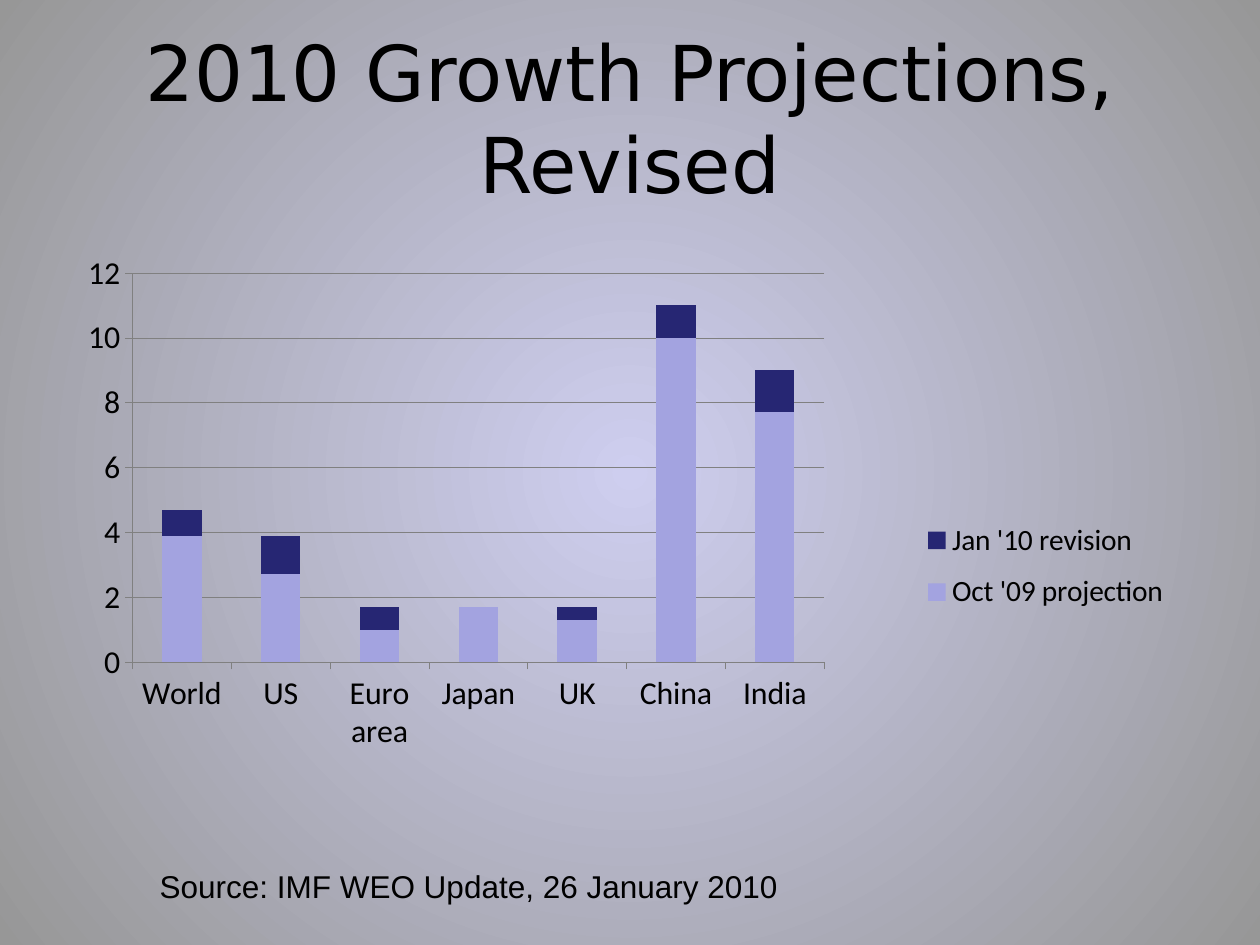
from lxml import etree
from pptx import Presentation
from pptx.chart.data import CategoryChartData
from pptx.dml.color import RGBColor
from pptx.enum.chart import XL_CHART_TYPE, XL_LEGEND_POSITION, XL_TICK_MARK
from pptx.enum.text import MSO_ANCHOR, MSO_AUTO_SIZE, PP_ALIGN
from pptx.oxml.ns import qn
from pptx.util import Cm, Pt

STACKED = XL_CHART_TYPE.COLUMN_STACKED
RIGHT = XL_LEGEND_POSITION.RIGHT
OUTSIDE = XL_TICK_MARK.OUTSIDE
MIDDLE = MSO_ANCHOR.MIDDLE
GROW = MSO_AUTO_SIZE.SHAPE_TO_FIT_TEXT
LEFT, CENTER = PP_ALIGN.LEFT, PP_ALIGN.CENTER

COLORS = {
    "text": "000000",
    "glow": "CECEEF",
    "edge": "979797",
    "line": "808080",
    "oct": "A3A3E0",
    "jan": "262673",
}


def rgb(name):
    return RGBColor.from_string(COLORS[name])


def write(frame, text, size, face, align=LEFT, wrap=True):
    frame.word_wrap = wrap
    frame.text = text
    par = frame.paragraphs[0]
    par.alignment = align
    font = par.runs[0].font
    font.size, font.name = Pt(size), face
    font.color.rgb = rgb("text")


deck = Presentation()
deck.slide_width, deck.slide_height = Cm(25.4), Cm(19.05)
slide = deck.slides.add_slide(deck.slide_layouts[5])

# Radial background
fill = slide.background.fill
fill.gradient()
for stop, name in zip(fill.gradient_stops, ("glow", "edge")):
    stop.color.rgb = rgb(name)
lin = slide.element.find(".//" + qn("a:lin"))
round_ = etree.Element(qn("a:path"), {"path": "circle"})
sides = dict.fromkeys("ltrb", "50000")
etree.SubElement(round_, qn("a:fillToRect"), sides)
lin.getparent().replace(lin, round_)

# Title
title = slide.shapes.title
title.left, title.top = Cm(1.27), Cm(0.76)
title.width, title.height = Cm(22.86), Cm(3.18)
title.text_frame.vertical_anchor = MIDDLE
write(title.text_frame, "2010 Growth Projections, Revised", 44,
      "DejaVu Sans", align=CENTER)

# Chart of projections and revisions
data = CategoryChartData()
data.categories = ["World", "US", "Euro area", "Japan", "UK", "China", "India"]
data.add_series("Oct '09 projection", [3.9, 2.7, 1, 1.7, 1.3, 10, 7.7])
data.add_series("Jan '10 revision", [0.8, 1.2, 0.7, 0, 0.4, 1, 1.3])
chart = slide.shapes.add_chart(
    STACKED, Cm(1.07), Cm(4.9), Cm(22.86), Cm(12.07), data).chart
chart.has_title = False
chart.has_legend = True
legend = chart.legend
legend.position, legend.include_in_layout = RIGHT, False
for font, size in ((chart.font, 18.2), (legend.font, 16.8)):
    font.size, font.name = Pt(size), "Calibri"
    font.color.rgb = rgb("text")

plot = chart.plots[0]
plot.gap_width, plot.overlap = 150, 100
plot.vary_by_categories = False
for series, name in zip(plot.series, ("oct", "jan")):
    series.format.fill.solid()
    series.format.fill.fore_color.rgb = rgb(name)

# Axes and grid
cat, val = chart.category_axis, chart.value_axis
val.minimum_scale, val.maximum_scale, val.major_unit = 0, 12, 2
val.has_major_gridlines = True
for axis in (cat, val):
    axis.major_tick_mark = OUTSIDE
for part in (cat, val, val.major_gridlines):
    part.format.line.color.rgb = rgb("line")
    part.format.line.width = Pt(0.25)

# Fixed places for the plot and the legend, as shares of the chart
area = chart.element.find(".//" + qn("c:plotArea"))
for old in area.findall(qn("c:layout")):
    area.remove(old)
spots = (
    (area, 0, "inner", (0.07, 0.05, 0.61, 0.65)),
    (legend._element, 1, None, (0.75, 0.44, 0.25, 0.2)),
)
for owner, index, target, box in spots:
    for old in owner.findall(qn("c:layout")):
        owner.remove(old)
    layout = etree.Element(qn("c:layout"))
    manual = etree.SubElement(layout, qn("c:manualLayout"))
    rules = [("layoutTarget", target)] if target else []
    rules += [("xMode", "edge"), ("yMode", "edge"), *zip("xywh", box)]
    for tag, value in rules:
        etree.SubElement(manual, qn("c:" + tag), val=str(value))
    owner.insert(index, layout)

# Source line
note = slide.shapes.add_textbox(Cm(2.97), Cm(17.35), Cm(13.08), Cm(1.02))
write(note.text_frame, "Source: IMF WEO Update, 26 January 2010", 18,
      "Arial", wrap=False)
note.text_frame.auto_size = GROW

deck.save("out.pptx")
